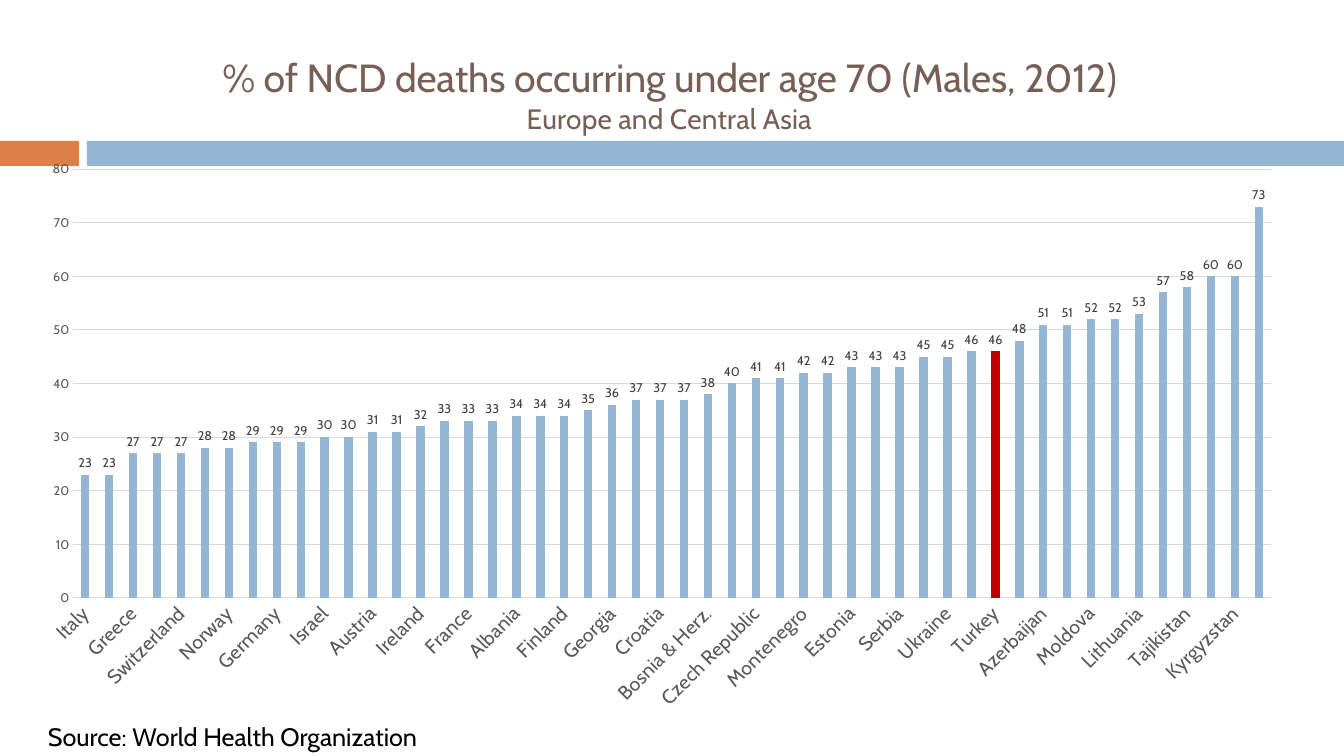
"""Build a slide charting NCD deaths under age 70 across Europe and Central Asia."""
import pptx
import pptx.chart.data
import pptx.dml.color
import pptx.enum.chart
import pptx.enum.shapes
import pptx.oxml
import pptx.oxml.ns
import pptx.util

RGB = pptx.dml.color.RGBColor
ORANGE = RGB(0xDD, 0x80, 0x47)
BLUE = RGB(0x94, 0xB6, 0xD2)
RED = RGB(0xC0, 0x00, 0x00)
BROWN = RGB(0x77, 0x5F, 0x55)
BLACK = RGB(0x00, 0x00, 0x00)
DARK = RGB(0x40, 0x40, 0x40)
GRAY = RGB(0x59, 0x59, 0x59)
PALE = RGB(0xD9, 0xD9, 0xD9)
FACE = "Cabin"
PX = 914400 / 100.8

TITLE = [("% of NCD deaths occurring under age 70 (Males, 2012)", 28),
         ("Europe and Central Asia", 20)]
SOURCE = "Source: World Health Organization"
MARKED = "Turkey"
DEATHS = [
    ("Italy", 23), ("Sweden", 23), ("Greece", 27), ("Spain", 27), ("Switzerland", 27),
    ("Iceland", 28), ("Norway", 28), ("Belgium", 29), ("Germany", 29),
    ("United Kingdom", 29), ("Israel", 30), ("Netherlands", 30), ("Austria", 31),
    ("Portugal", 31), ("Ireland", 32), ("Cyprus", 33), ("France", 33),
    ("Luxembourg", 33), ("Albania", 34), ("Denmark", 34), ("Finland", 34),
    ("Malta", 35), ("Georgia", 36), ("Armenia", 37), ("Croatia", 37),
    ("Slovenia", 37), ("Bosnia & Herz.", 38), ("Bulgaria", 40),
    ("Czech Republic", 41), ("Macedonia", 41), ("Montenegro", 42), ("Romania", 42),
    ("Estonia", 43), ("Latvia", 43), ("Serbia", 43), ("Hungary", 45),
    ("Ukraine", 45), ("Poland", 46), ("Turkey", 46), ("Slovakia", 48),
    ("Azerbaijan", 51), ("Belarus", 51), ("Moldova", 52), ("Russia", 52),
    ("Lithuania", 53), ("Uzbekistan", 57), ("Tajikistan", 58), ("Kazakhstan", 60),
    ("Kyrgyzstan", 60), ("Turkmenistan", 73),
]
BANDS = [((0, 141, 79, 25), ORANGE), ((87, 141, 1257, 25), BLUE)]
CHART = (25, 36, 1270, 687)
PLOT = (73, 169, 1197, 429)
HEAD = (219, 50)
NOTE = (38, 716, 533, 40)


def emu(box):
    return [round(n * PX) for n in box]


def style(font, size, color):
    font.name = FACE
    font.size = pptx.util.Pt(size)
    font.bold = False
    font.color.rgb = color


def write(para, text, size, color):
    run = para.add_run()
    run.text = text
    style(run.font, size, color)


def place(parent, index, box, inner=False):
    for old in parent.findall(pptx.oxml.ns.qn("c:layout")):
        parent.remove(old)
    left, top, wide, high = CHART
    spots = [(box[0] - left) / wide, (box[1] - top) / high]
    spots += [n / size for n, size in zip(box[2:], (wide, high))]
    tags = [("layoutTarget", "inner")] if inner else []
    tags += [("xMode", "edge"), ("yMode", "edge")]
    tags += [(tag, f"{n:.3f}") for tag, n in zip("xywh", spots)]
    body = "".join(f'<c:{tag} val="{val}"/>' for tag, val in tags)
    parent.insert(index, pptx.oxml.parse_xml(
        f'<c:layout {pptx.oxml.ns.nsdecls("c")}><c:manualLayout>{body}'
        "</c:manualLayout></c:layout>"))


def add_bands(slide):
    for box, color in BANDS:
        band = slide.shapes.add_shape(
            pptx.enum.shapes.MSO_SHAPE.RECTANGLE, *emu(box))
        band.shadow.inherit = False
        band.fill.solid()
        band.fill.fore_color.rgb = color
        band.line.fill.background()


def style_axes(chart):
    cat, val = chart.category_axis, chart.value_axis
    for axis, size in ((cat, 14), (val, 9)):
        axis.major_tick_mark = pptx.enum.chart.XL_TICK_MARK.NONE
        axis.minor_tick_mark = pptx.enum.chart.XL_TICK_MARK.NONE
        style(axis.tick_labels.font, size, GRAY)
    cat.has_major_gridlines = False
    val.has_major_gridlines = True
    for line in (cat.format.line, val.major_gridlines.format.line):
        line.color.rgb = PALE
        line.width = pptx.util.Pt(0.75)
    val.format.line.fill.background()
    val.minimum_scale, val.maximum_scale, val.major_unit = 0, 80, 10
    root = cat._element
    root.find(".//" + pptx.oxml.ns.qn("a:bodyPr")).set("rot", "-2700000")
    skip = pptx.oxml.parse_xml(
        f'<c:tickLblSkip {pptx.oxml.ns.nsdecls("c")} val="2"/>')
    root.find(pptx.oxml.ns.qn("c:noMultiLvlLbl")).addprevious(skip)


def style_bars(plot):
    plot.gap_width = 182
    plot.vary_by_categories = False
    bars = plot.series[0]
    bars.invert_if_negative = False
    marked = bars.points[[name for name, _ in DEATHS].index(MARKED)]
    for item, color in ((bars, BLUE), (marked, RED)):
        item.format.fill.solid()
        item.format.fill.fore_color.rgb = color
    labels = bars.data_labels
    labels.show_value = True
    labels.position = pptx.enum.chart.XL_LABEL_POSITION.OUTSIDE_END
    style(labels.font, 9, DARK)


def add_chart(slide):
    data = pptx.chart.data.CategoryChartData()
    data.categories = [name for name, _ in DEATHS]
    data.add_series("Series 1", [share for _, share in DEATHS])
    kind = pptx.enum.chart.XL_CHART_TYPE.COLUMN_CLUSTERED
    chart = slide.shapes.add_chart(kind, *emu(CHART), data).chart
    style(chart.font, 10, BLACK)
    chart.has_legend = False
    chart.has_title = True
    frame = chart.chart_title.text_frame
    for row, (text, size) in enumerate(TITLE):
        para = frame.add_paragraph() if row else frame.paragraphs[0]
        write(para, text, size, BROWN)
    place(chart.chart_title._element, 1, HEAD)
    place(chart._chartSpace.chart.plotArea, 0, PLOT, inner=True)
    style_axes(chart)
    style_bars(chart.plots[0])


def main():
    deck = pptx.Presentation()
    deck.slide_width, deck.slide_height = emu((1344, 756))
    slide = deck.slides.add_slide(deck.slide_layouts[6])
    add_bands(slide)
    add_chart(slide)
    frame = slide.shapes.add_textbox(*emu(NOTE)).text_frame
    frame.word_wrap = True
    write(frame.paragraphs[0], SOURCE, 18, BLACK)
    deck.save("out.pptx")


if __name__ == "__main__":
    main()
